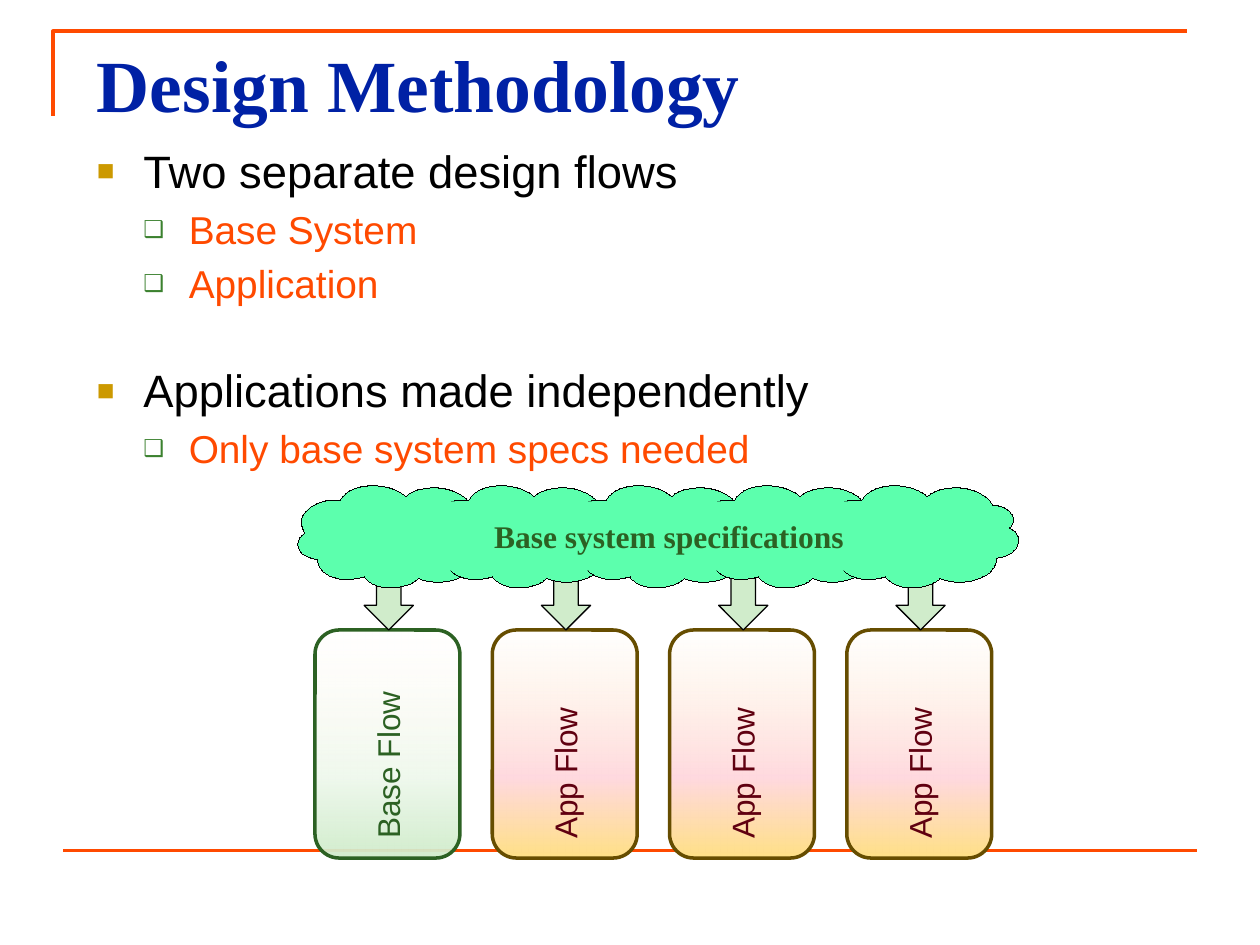
import pptx
import pptx.dml.color
import pptx.enum.shapes
import pptx.enum.text
import pptx.oxml
import pptx.oxml.ns
import pptx.util
from lxml import etree

Inches, Pt = pptx.util.Inches, pptx.util.Pt
RGBColor = pptx.dml.color.RGBColor
MSO_SHAPE = pptx.enum.shapes.MSO_SHAPE
ANCHOR = pptx.enum.text.MSO_ANCHOR
ALIGN = pptx.enum.text.PP_ALIGN
qn = pptx.oxml.ns.qn

ORANGE = RGBColor(0xFF, 0x4A, 0x00)
BLUE = RGBColor(0x00, 0x21, 0xA5)
BLACK = RGBColor(0, 0, 0)
GREEN = RGBColor(0x2C, 0x61, 0x23)
BROWN = RGBColor(0x66, 0x4D, 0x00)
MAROON = RGBColor(0x60, 0x00, 0x10)
PALE_GREEN = RGBColor(0xD0, 0xEC, 0xCB)
MINT = RGBColor(0x5C, 0xFF, 0xAD)

# Content
TITLE = "Design Methodology"
BULLETS = [  # level, text, space before in points
    (0, "Two separate design flows", 0),
    (1, "Base System", 4.4),
    (1, "Application", 4.4),
    (0, "Applications made independently", 32),
    (1, "Only base system specs needed", 4.4),
]
LEVELS = [
    dict(indent=(0.37, -0.37), char="■", bullet="CC9900", percent=65,
         font=dict(name="Arial", size=Pt(25.9)), color=BLACK),
    dict(indent=(0.73, -0.36), char="❑", bullet="3B812F", percent=60,
         font=dict(name="Arial", size=Pt(22.2)), color=ORANGE),
]
# Gradient stops: position %, colour, opacity %
BASE = dict(line=GREEN, text=GREEN, stops=[
    (0, "FFEFD1", 0), (65, "D0ECCB", 34), (100, "D3EDCE", 100)])
APP = dict(line=BROWN, text=MAROON, stops=[
    (0, "FFEFD1", 0), (65, "FFD9DF", 100), (100, "FFE085", 100)])
FLOWS = [("Base Flow", BASE)] + [("App Flow", APP)] * 3
CLOUD_LABEL = "Base system specifications"
CLOUD_LEFTS = [2.34, 3.36, 4.45, 5.47, 6.48]
CLOUD_TOP = 3.83
# Cloud outline: start, then Bezier triples, relative to its left top corner
CLOUD_START = (0.08, 0.40)
CLOUD_CURVES = [
    ((0.01, 0.44), (0, 0.53), (0.08, 0.58)),
    ((0.11, 0.59), (0.14, 0.61), (0.18, 0.61)),
    ((0.18, 0.70), (0.28, 0.77), (0.41, 0.77)),
    ((0.46, 0.77), (0.51, 0.76), (0.55, 0.75)),
    ((0.61, 0.83), (0.75, 0.86), (0.87, 0.82)),
    ((0.92, 0.81), (0.95, 0.79), (0.98, 0.76)),
    ((1.11, 0.82), (1.29, 0.79), (1.38, 0.71)),
    ((1.41, 0.68), (1.43, 0.64), (1.43, 0.60)),
    ((1.55, 0.59), (1.62, 0.51), (1.60, 0.43)),
    ((1.59, 0.40), (1.57, 0.38), (1.53, 0.36)),
    ((1.59, 0.31), (1.57, 0.24), (1.49, 0.20)),
    ((1.46, 0.19), (1.43, 0.18), (1.40, 0.18)),
    ((1.35, 0.08), (1.18, 0.02), (1.02, 0.05)),
    ((0.96, 0.06), (0.91, 0.08), (0.88, 0.11)),
    ((0.79, 0.03), (0.61, 0), (0.47, 0.05)),
    ((0.42, 0.07), (0.38, 0.10), (0.36, 0.14)),
    ((0.20, 0.13), (0.07, 0.20), (0.05, 0.30)),
    ((0.05, 0.33), (0.06, 0.37), (0.08, 0.40)),
]


def set_attrs(obj, values):
    for name, value in values.items():
        setattr(obj, name, value)


def box(*lengths):
    return [Inches(v) for v in lengths]


def style(sp, fill=None, line=None, width=0):
    sp.shadow.inherit = False
    if fill is None:
        sp.fill.background()
    else:
        sp.fill.solid()
        sp.fill.fore_color.rgb = fill
    if line is None:
        sp.line.fill.background()
    else:
        sp.line.color.rgb = line
        # A zero width has to be written out to give a hairline
        sp._element.spPr.find(qn("a:ln")).set("w", str(Pt(width)))


def write(p, text, color, font):
    r = p.add_run()
    r.text = text
    set_attrs(r.font, font)
    r.font.color.rgb = color


def add_bullet(p, level):
    pPr = p._p.get_or_add_pPr()
    left, hang = level["indent"]
    pPr.set("marL", str(Inches(left)))
    pPr.set("indent", str(Inches(hang)))
    clr = etree.SubElement(pPr, qn("a:buClr"))
    etree.SubElement(clr, qn("a:srgbClr"), val=level["bullet"])
    etree.SubElement(pPr, qn("a:buSzPct"), val=str(level["percent"] * 1000))
    etree.SubElement(pPr, qn("a:buFont"), typeface="Arial")
    etree.SubElement(pPr, qn("a:buChar"), char=level["char"])


def set_gradient(sp, stops):
    sp.fill.gradient()
    sp.fill.gradient_angle = 270
    gs_list = sp._element.spPr.find(".//" + qn("a:gsLst"))
    for gs in list(gs_list):
        gs_list.remove(gs)
    for pos, color, opacity in stops:
        gs = etree.SubElement(gs_list, qn("a:gs"), pos=str(pos * 1000))
        clr = etree.SubElement(gs, qn("a:srgbClr"), val=color)
        if opacity < 100:
            etree.SubElement(clr, qn("a:alpha"), val=str(opacity * 1000))


def add_outline(shapes, points, close):
    points = [box(*pt) for pt in points]
    fb = shapes.build_freeform(*points[0])
    fb.add_line_segments(points[1:], close=close)
    return fb.convert_to_shape()


def add_cloud(shapes, left, top):
    points = [CLOUD_START] + [pt for curve in CLOUD_CURVES for pt in curve]
    sp = add_outline(shapes, [(left + x, top + y) for x, y in points], True)
    # Each three line points become one Bezier curve
    lines = list(sp._element.spPr.iter(qn("a:lnTo")))
    for i in range(0, 3 * len(CLOUD_CURVES), 3):
        curve = etree.Element(qn("a:cubicBezTo"))
        lines[i].addprevious(curve)
        for line in lines[i:i + 3]:
            curve.append(line[0])
            line.getparent().remove(line)
    return sp


prs = pptx.Presentation()
prs.slide_width, prs.slide_height = box(10, 7.5)
s = prs.slides.add_slide(prs.slide_layouts[6])

# Frame lines
corner = add_outline(s.shapes, [(0.42, 0.92), (0.42, 0.25), (9.42, 0.25)], False)
style(corner, line=ORANGE, width=2.25)
rule = s.shapes.add_connector(
    pptx.enum.shapes.MSO_CONNECTOR.STRAIGHT, *box(0.5, 6.75, 9.5, 6.75))
rule.line.color.rgb = ORANGE
rule.line.width = Pt(2.25)
etree.SubElement(rule._element.spPr, qn("a:effectLst"))

# Title
tf = s.shapes.add_textbox(*box(0.67, 0.26, 8.75, 0.63)).text_frame
tf.word_wrap = True
write(tf.paragraphs[0], TITLE, BLUE,
      dict(name="Times New Roman", size=Pt(42), bold=True))

# Bullets
tf = s.shapes.add_textbox(*box(0.67, 1.09, 9.1, 2.59)).text_frame
tf.word_wrap = True
for i, (depth, text, before) in enumerate(BULLETS):
    level = LEVELS[depth]
    p = tf.add_paragraph() if i else tf.paragraphs[0]
    add_bullet(p, level)
    set_attrs(p, dict(level=depth, space_before=Pt(before)))
    write(p, text, level["color"], level["font"])

# Flow boxes, then the arrows into them
BOX_LEFT, BOX_TOP, BOX_W, BOX_H, PITCH = 2.5, 5, 1.15, 1.81, 1.407
ARROW_W, ARROW_H = 0.39, 0.47
lefts = [BOX_LEFT + i * PITCH for i in range(len(FLOWS))]
for left, (text, look) in zip(lefts, FLOWS):
    sp = s.shapes.add_shape(MSO_SHAPE.ROUNDED_RECTANGLE,
                            *box(left, BOX_TOP, BOX_W, BOX_H))
    style(sp, line=look["line"], width=2)
    set_gradient(sp, look["stops"])
    tf = sp.text_frame
    set_attrs(tf, dict(word_wrap=True, vertical_anchor=ANCHOR.MIDDLE))
    tf._txBody.bodyPr.set("vert", "vert270")
    tf.paragraphs[0].alignment = ALIGN.LEFT
    write(tf.paragraphs[0], text, look["text"], dict(name="Arial", size=Pt(18)))
for left in lefts:
    sp = s.shapes.add_shape(MSO_SHAPE.DOWN_ARROW, *box(
        left + (BOX_W - ARROW_W) / 2 + 0.01, BOX_TOP - ARROW_H, ARROW_W, ARROW_H))
    style(sp, PALE_GREEN, BLACK, 0.75)

# Cloud bank with its label
cloud_bank = s.shapes.add_group_shape()
for left in CLOUD_LEFTS:
    style(add_cloud(cloud_bank.shapes, left, CLOUD_TOP), MINT, BLACK, 0)
sp = cloud_bank.shapes.add_shape(MSO_SHAPE.RECTANGLE, *box(2.89, 3.98, 4.84, 0.55))
style(sp, MINT)
set_attrs(sp.text_frame, dict(word_wrap=True, vertical_anchor=ANCHOR.MIDDLE))
p = sp.text_frame.paragraphs[0]
p.alignment = ALIGN.CENTER
write(p, CLOUD_LABEL, GREEN, dict(name="Times New Roman", size=Pt(18), bold=True))

prs.save("out.pptx")
